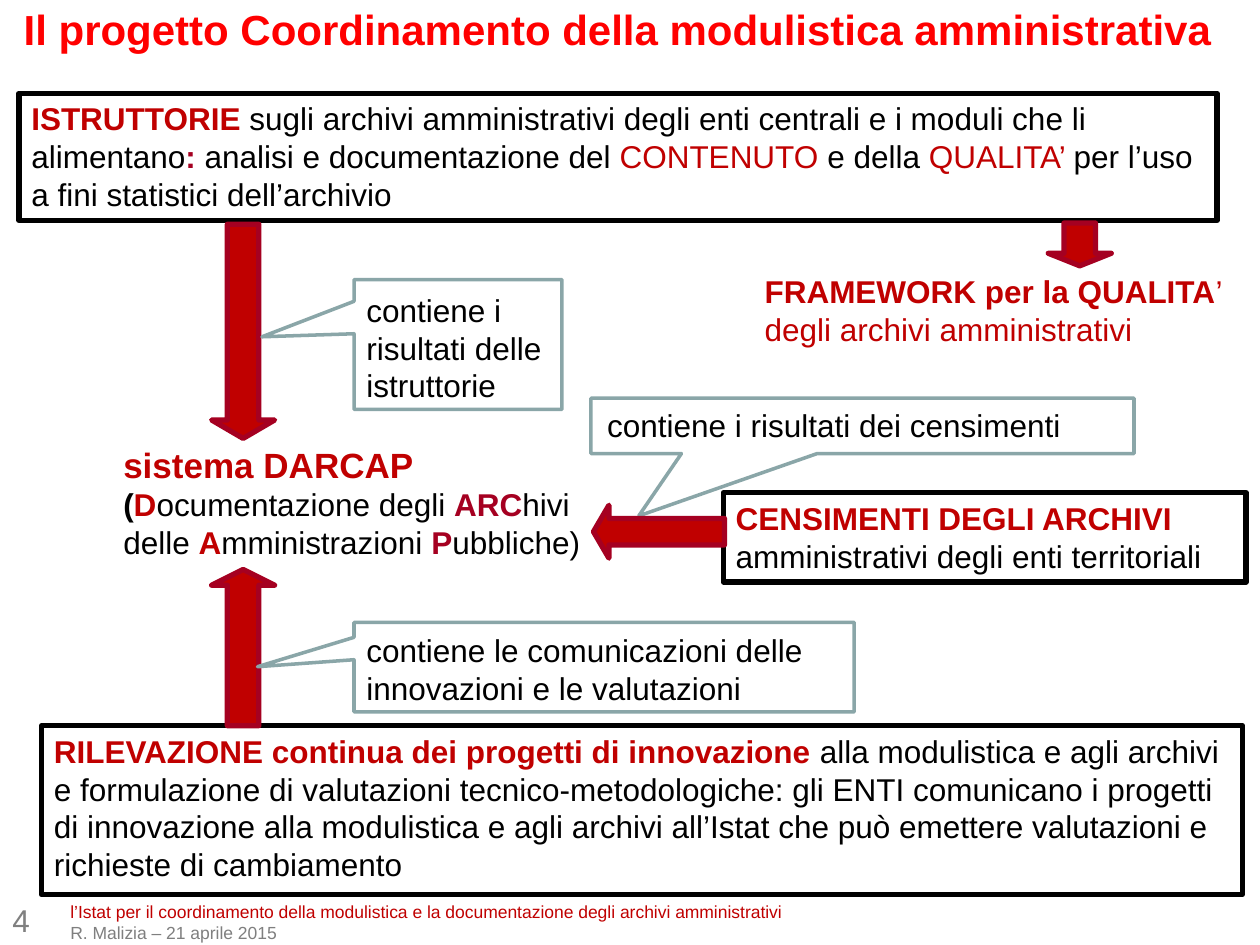
from pptx import Presentation
from pptx.dml.color import RGBColor
from pptx.enum.shapes import MSO_SHAPE
from pptx.enum.text import MSO_ANCHOR, PP_ALIGN
from pptx.util import Emu, Pt

PX = 9144
RED, WINE, BLACK, TEAL = "C00000", "A50021", "000000", "8AA6A8"


def px(*lengths):
    """Turn px lengths into EMU."""
    return [Emu(n * PX) for n in lengths]


def color(value):
    """Turn a hex string into a colour."""
    return RGBColor.from_string(value)


def write(sp, paragraphs, size=18):
    """Fill a shape with paragraphs of (text, colour, bold, size) runs."""
    tf = sp.text_frame
    frame_format = {"word_wrap": True, "vertical_anchor": MSO_ANCHOR.TOP}
    for name, value in frame_format.items():
        setattr(tf, name, value)
    for i, runs in enumerate(paragraphs):
        p = tf.add_paragraph() if i else tf.paragraphs[0]
        p.alignment = PP_ALIGN.LEFT
        for text, ink, bold, *own_size in runs:
            r = p.add_run()
            r.text = text
            run_format = {"name": "Arial", "bold": bold,
                          "size": Pt(own_size[0] if own_size else size)}
            for name, value in run_format.items():
                setattr(r.font, name, value)
            r.font.color.rgb = color(ink)


def text_box(s, box, *paragraphs, size=18):
    """Add a wrapped text box."""
    write(s.shapes.add_textbox(*px(*box)), paragraphs, size)


def shape(s, kind, box, line, width, fill=None, adjust=()):
    """Add an outlined preset shape without shadow."""
    sp = s.shapes.add_shape(kind, *px(*box))
    sp.shadow.inherit = False
    sp.line.color.rgb = color(line)
    sp.line.width = Pt(width)
    if fill:
        sp.fill.solid()
        sp.fill.fore_color.rgb = color(fill)
    else:
        sp.fill.background()
    for i, value in enumerate(adjust):
        sp.adjustments[i] = value
    return sp


def framed(s, box, *runs):
    """Add a black frame holding one paragraph."""
    write(shape(s, MSO_SHAPE.RECTANGLE, box, BLACK, 3), [runs])


def arrow(s, box, kind=MSO_SHAPE.DOWN_ARROW, head=0.292, rotation=0):
    """Add a red block arrow."""
    shape(s, kind, box, WINE, 3, RED, (0.5, head)).rotation = rotation


def note(s, box, text, tail, text_offset, text_width):
    """Add a callout with its text laid over it."""
    x, y, w, h = box
    dx, dy = text_offset
    shape(s, MSO_SHAPE.RECTANGULAR_CALLOUT, box, TEAL, 2, adjust=tail)
    text_box(s, (x + dx, y + dy, text_width, h), [(text, BLACK, False)])


def inquiries(s, box):
    """Place the inquiries frame, its two arrows and its note."""
    x, y, w, h = box
    framed(s, box,
           ("ISTRUTTORIE ", RED, True),
           ("sugli archivi amministrativi degli enti centrali e i moduli "
            "che li alimentano", BLACK, False),
           (": ", WINE, True),
           ("analisi e documentazione del ", BLACK, False),
           ("CONTENUTO", RED, False),
           (" e della ", BLACK, False),
           ("QUALITA’ ", RED, False),
           ("per l’uso a fini statistici dell’archivio", BLACK, False))
    arrow(s, (x + 153, y + 104, 50, 170))
    arrow(s, (x + 817, y + 103, 50, 34))
    note(s, (x + 266, y + 148, 165, 103), "contiene i risultati delle istruttorie",
         (-0.943, -0.06), (0, 4), 166)


def framework(s, box):
    """Place the quality framework label."""
    text_box(s, box, [("FRAMEWORK per la QUALITA", RED, True),
                      ("’ degli archivi amministrativi", RED, False)])


def darcap(s, box):
    """Place the name of the system with its acronym letters marked."""
    text_box(s, box, [("sistema DARCAP", RED, True, 20),
                      (" ", WINE, True),
                      ("(", BLACK, True),
                      ("D", RED, True),
                      ("ocumentazione degli ", BLACK, False),
                      ("ARC", WINE, True),
                      ("hivi delle ", BLACK, False),
                      ("A", RED, True),
                      ("mministrazioni ", BLACK, False),
                      ("P", WINE, True),
                      ("ubbliche)", BLACK, False)])


def census(s, box):
    """Place the census frame, its note and its arrow."""
    x, y, w, h = box
    note(s, (x - 105, y - 75, 431, 44), "contiene i risultati dei censimenti",
         (-0.412, 1.625), (3, 1), 403)
    framed(s, box,
           ("CENSIMENTI DEGLI ARCHIVI ", RED, True),
           ("amministrativi degli enti territoriali", BLACK, False))
    arrow(s, (x - 72, y - 21, 42, 104), rotation=90)


def survey(s, box):
    """Place the survey frame, its arrow and its note."""
    x, y, w, h = box
    framed(s, box,
           ("RILEVAZIONE continua dei progetti di innovazione ", RED, True),
           ("alla modulistica e agli archivi e formulazione di valutazioni "
            "tecnico-metodologiche: gli ENTI comunicano i progetti di "
            "innovazione alla modulistica e agli archivi all’Istat che può "
            "emettere valutazioni e richieste di cambiamento", BLACK, False))
    arrow(s, (x + 135, y - 124, 50, 124), MSO_SHAPE.UP_ARROW, 0.25)
    note(s, (x + 248, y - 82, 397, 71),
         "contiene le comunicazioni delle innovazioni e le valutazioni",
         (-0.693, -0.005), (0, 2), 409)


def title(s, box):
    """Place the slide title."""
    text_box(s, box, [("Il progetto Coordinamento della modulistica "
                       "amministrativa", "FF0000", True)], size=24)


def footer(s, box):
    """Place the page number and the two footer lines."""
    x, y, w, h = box
    text_box(s, (x, y, 30, 40), [("4", "808080", False)])
    text_box(s, (x + 46, y, w - 46, h),
             [("l’Istat per il coordinamento della modulistica e la "
               "documentazione degli archivi amministrativi", RED, False)],
             [("R. Malizia – 21 aprile 2015", "7F7F7F", False)], size=10)


def main():
    """Build and save the slide."""
    prs = Presentation()
    prs.slide_width, prs.slide_height = px(1000, 750)
    s = prs.slides.add_slide(prs.slide_layouts[6])
    title(s, (9, -2, 966, 50))
    inquiries(s, (15, 74, 951, 101))
    framework(s, (597, 211, 389, 71))
    darcap(s, (88, 347, 402, 104))
    census(s, (574, 391, 415, 71))
    survey(s, (33, 576, 953, 134))
    footer(s, (0, 710, 762, 44))
    prs.save("out.pptx")


if __name__ == "__main__":
    main()
